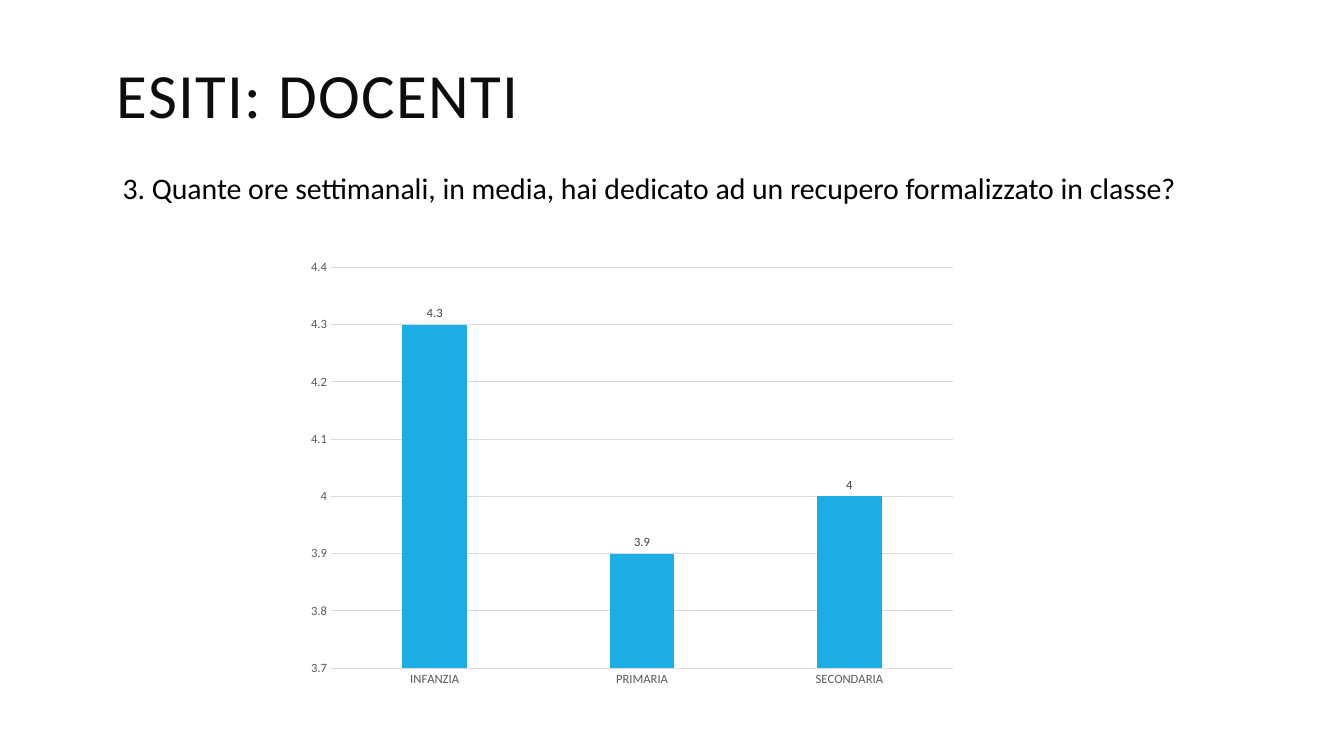
from pptx import Presentation
from pptx import util as u
from pptx.chart.data import CategoryChartData
from pptx.dml.color import RGBColor
from pptx.enum import chart as ch, text
from pptx.oxml import parse_xml
from pptx.oxml.ns import nsdecls

COLORS = {"title": "0D0D0D", "text": "000000", "axis": "595959",
          "grid": "D9D9D9", "label": "404040", "bar": "1CADE4"}


class Deck:
    """Holds the style and the current slide."""
    font = "Calibri"

    def __init__(self, width, height):
        self.prs = Presentation()
        self.prs.slide_width, self.prs.slide_height = u.Cm(width), u.Cm(height)
        self.s = self.prs.slides.add_slide(self.prs.slide_layouts[5])

    def color(self, name):
        return RGBColor.from_string(COLORS[name])

    def style(self, font, size, color):
        font.name, font.size = self.font, u.Pt(size)
        font.color.rgb = self.color(color)

    def line(self, fmt, color, width=0.75):
        fmt.line.color.rgb = self.color(color)
        fmt.line.width = u.Pt(width)

    def title(self, words, x, y, w, h):
        sp = self.s.shapes.title
        sp.left, sp.top, sp.width, sp.height = map(u.Cm, (x, y, w, h))
        tf = sp.text_frame
        tf.text = words
        tf.margin_left = u.Cm(0.1)
        tf.vertical_anchor = text.MSO_ANCHOR.MIDDLE
        p = tf.paragraphs[0]
        p.alignment, p.line_spacing = text.PP_ALIGN.LEFT, 0.8
        self.style(p.font, 45, "title")
        # Letter spacing of one point
        p.runs[0].font._element.set("spc", "100")

    def question(self, words, x, y, w, h):
        tf = self.s.shapes.add_textbox(*map(u.Cm, (x, y, w, h))).text_frame
        tf.word_wrap = True
        tf.text = words
        self.style(tf.paragraphs[0].font, 21.3, "text")

    def columns(self, values, x, y, w, h, plot_area):
        data = CategoryChartData()
        data.categories = list(values)
        data.add_series("Series 1", list(values.values()))
        chart = self.s.shapes.add_chart(
            ch.XL_CHART_TYPE.COLUMN_CLUSTERED, *map(u.Cm, (x, y, w, h)), data).chart
        chart.has_legend = chart.has_title = False
        self.style(chart.font, 10, "text")

        # Bars and their values
        plot = chart.plots[0]
        plot.gap_width, plot.overlap, plot.vary_by_categories = 219, -27, False
        fill = plot.series[0].format.fill
        fill.solid()
        fill.fore_color.rgb = self.color("bar")
        plot.has_data_labels = True
        labels = plot.data_labels
        labels.show_value = True
        labels.position = ch.XL_LABEL_POSITION.OUTSIDE_END
        self.style(labels.font, 9, "label")

        # Axes and gridlines
        for axis in (chart.category_axis, chart.value_axis):
            axis.major_tick_mark = axis.minor_tick_mark = ch.XL_TICK_MARK.NONE
            self.style(axis.tick_labels.font, 9, "axis")
        self.line(chart.category_axis.format, "grid")
        axis = chart.value_axis
        axis.minimum_scale, axis.maximum_scale, axis.major_unit = 3.7, 4.4, 0.1
        axis.format.line.fill.background()
        self.line(axis.major_gridlines.format, "grid")

        # Inner plot area, as shares of the chart
        tags = "".join(f'<c:{k}Mode val="edge"/>' for k in "xy")
        tags += "".join(f'<c:{k} val="{v}"/>' for k, v in zip("xywh", plot_area))
        area = chart._chartSpace.chart.plotArea
        for old in area.findall("{*}layout"):
            area.remove(old)
        area.insert(0, parse_xml(
            f'<c:layout {nsdecls("c")}><c:manualLayout>'
            f'<c:layoutTarget val="inner"/>{tags}</c:manualLayout></c:layout>'))


def main():
    deck = Deck(33.87, 19.05)
    deck.title("ESITI: DOCENTI", 2.84, 1.44, 22.28, 2.16)
    deck.question("3. Quante ore settimanali, in media, hai dedicato ad un "
                  "recupero formalizzato in classe?", 2.84, 4.14, 27.91, 1.17)
    deck.columns({"INFANZIA": 4.3, "PRIMARIA": 3.9, "SECONDARIA": 4},
                 7.49, 6.17, 17.04, 11.35, (0.05, 0.05, 0.92, 0.89))
    deck.prs.save("out.pptx")


if __name__ == "__main__":
    main()
